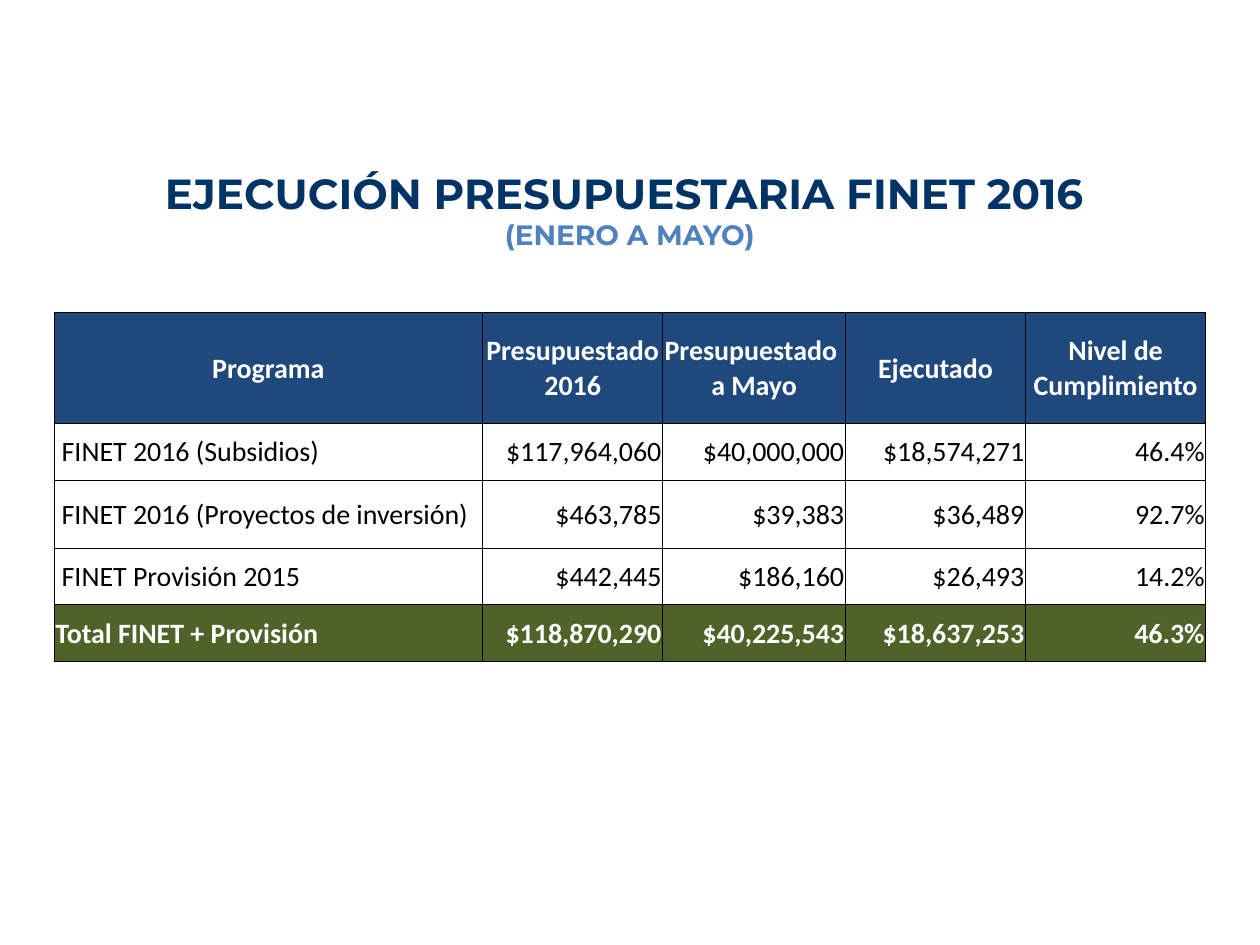
from lxml import etree
from pptx import Presentation, util as u
from pptx.dml.color import RGBColor
from pptx.enum import text
from pptx.oxml.ns import qn

AL, MIDDLE = text.PP_ALIGN, text.MSO_ANCHOR.MIDDLE


def write(tf, content, size=16, font="Calibri", color="000000", bold=False, align=AL.LEFT, new=False):
    """Write one paragraph per line; new=True adds them after the existing text."""
    for i, line in enumerate(content.split("\n")):
        p = tf.add_paragraph() if new or i else tf.paragraphs[0]
        p.alignment = align
        r = p.add_run()
        r.text = line
        r.font.size, r.font.name, r.font.bold = u.Pt(size), font, bold
        r.font.color.rgb = RGBColor.from_string(color)


def add_borders(cell, color="000000", width=0.5):
    tcPr = cell._tc.get_or_add_tcPr()
    for side in ("lnL", "lnR", "lnT", "lnB"):
        ln = etree.SubElement(tcPr, qn(f"a:{side}"), w=str(u.Pt(width)))
        fill = etree.SubElement(ln, qn("a:solidFill"))
        etree.SubElement(fill, qn("a:srgbClr"), val=color)


prs = Presentation()
prs.slide_width, prs.slide_height = u.Inches(10), u.Inches(7.5)
s = prs.slides.add_slide(prs.slide_layouts[6])

# Title
tf = s.shapes.add_textbox(u.Inches(0), u.Inches(1.07), u.Inches(10), u.Inches(1.18)).text_frame
tf.word_wrap = True
tf.vertical_anchor = MIDDLE
write(tf, "EJECUCIÓN PRESUPUESTARIA FINET 2016 ", size=24, font="Montserrat",
      color="003366", bold=True, align=AL.CENTER)
write(tf, "(ENERO A MAYO)", font="Montserrat", color="4F81BD", bold=True,
      align=AL.CENTER, new=True)

# Budget table
rows = [
    ["Programa", "Presupuestado\n2016", "Presupuestado \na Mayo", "Ejecutado", "Nivel de Cumplimiento"],
    ["FINET 2016 (Subsidios)", "$117,964,060", "$40,000,000", "$18,574,271", "46.4%"],
    ["FINET 2016 (Proyectos de inversión)", "$463,785", "$39,383", "$36,489", "92.7%"],
    ["FINET Provisión 2015", "$442,445", "$186,160", "$26,493", "14.2%"],
    ["Total FINET + Provisión", "$118,870,290", "$40,225,543", "$18,637,253", "46.3%"],
]
widths = [3.4, 1.43, 1.45, 1.43, 1.43]
heights = [0.88, 0.45, 0.54, 0.45, 0.45]
fills = {0: "1F497D", len(rows) - 1: "4F6228"}

table = s.shapes.add_table(len(rows), len(widths), u.Inches(0.43), u.Inches(2.48),
                           u.Inches(sum(widths)), u.Inches(sum(heights))).table
for column, width in zip(table.columns, widths):
    column.width = u.Inches(width)
for i, (values, height) in enumerate(zip(rows, heights)):
    table.rows[i].height = u.Inches(height)
    strong = i in fills
    for j, value in enumerate(values):
        cell = table.cell(i, j)
        indented = j == 0 and not strong
        cell.margin_left = u.Inches(0.06 if indented else 0.01)
        cell.margin_right = cell.margin_top = u.Inches(0.01)
        cell.margin_bottom = 0
        cell.vertical_anchor = MIDDLE
        add_borders(cell)
        if strong:
            cell.fill.solid()
            cell.fill.fore_color.rgb = RGBColor.from_string(fills[i])
        else:
            cell.fill.background()
        align = AL.CENTER if i == 0 else AL.RIGHT if j else AL.LEFT
        write(cell.text_frame, value, color="FFFFFF" if strong else "000000",
              bold=strong, align=align)

prs.save("out.pptx")
